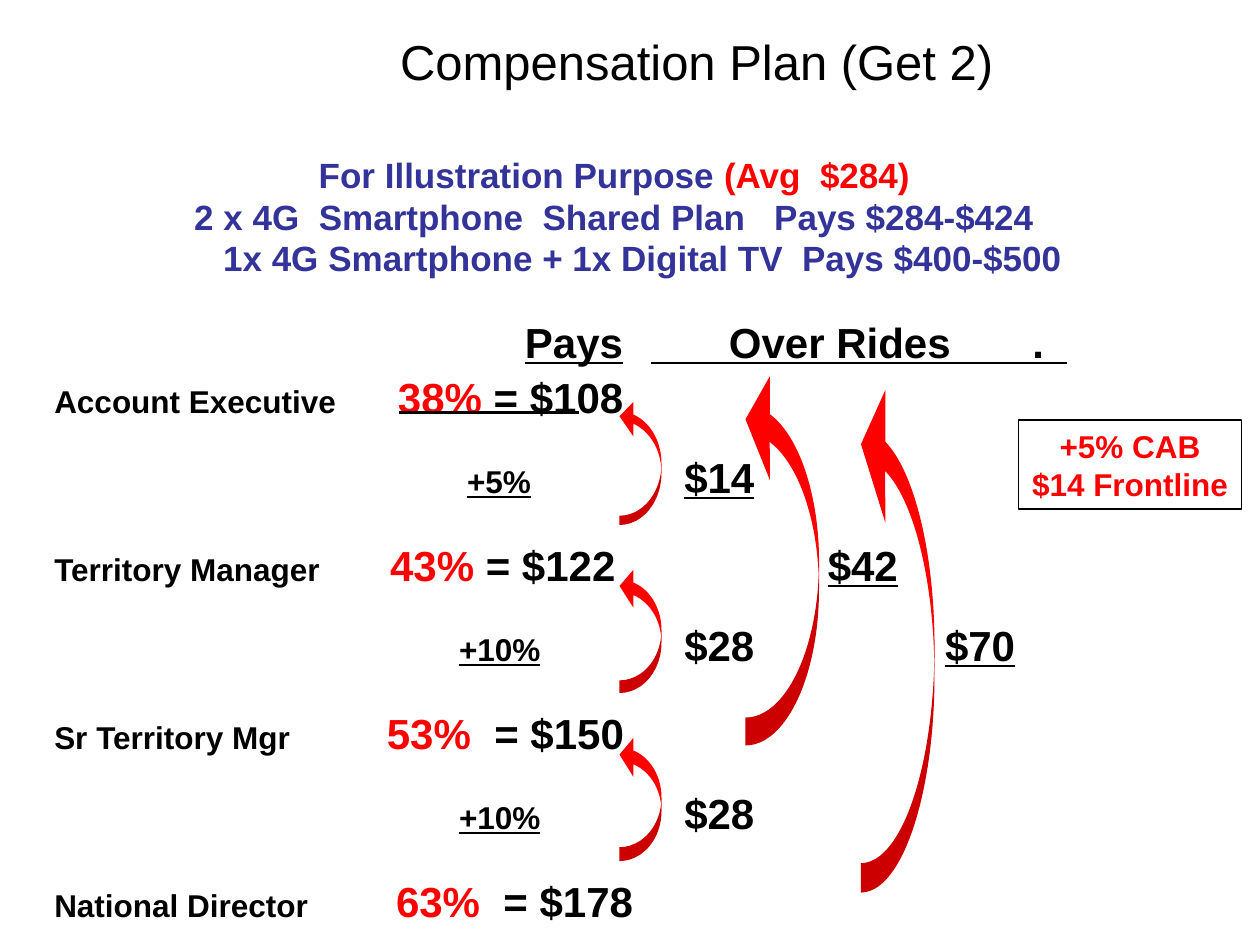
from lxml import etree
from pptx import Presentation
from pptx.dml.color import RGBColor
from pptx.enum.shapes import MSO_CONNECTOR, MSO_SHAPE
from pptx.enum.text import MSO_ANCHOR, PP_ALIGN
from pptx.oxml.ns import qn
from pptx.util import Pt

CURVE = MSO_SHAPE.CURVED_RIGHT_ARROW
RECT = MSO_SHAPE.RECTANGLE
LINE = MSO_CONNECTOR.STRAIGHT
TOP, MIDDLE = MSO_ANCHOR.TOP, MSO_ANCHOR.MIDDLE
LEFT, CENTER = PP_ALIGN.LEFT, PP_ALIGN.CENTER
HEX = {"black": "000000", "red": "FF0000", "blue": "333399"}


def rgb(name):
    """Return the named colour."""
    return RGBColor.from_string(HEX[name])


def write(para, text, size=18, color="black", bold=True, under=False):
    """Add a formatted run to a paragraph."""
    run = para.add_run()
    run.text = text
    font = run.font
    font.name, font.size = "Arial", Pt(size)
    font.bold, font.underline = bold, under
    font.color.rgb = rgb(color)


def set_tabs(para, stops):
    """Give a paragraph left tab stops, in points."""
    tabs = etree.SubElement(para._p.get_or_add_pPr(), qn("a:tabLst"))
    for stop in stops:
        etree.SubElement(tabs, qn("a:tab"), pos=str(Pt(stop)), algn="l")


def set_frame(frame, wrap=True, anchor=TOP):
    """Clear the insets of a text frame and return it."""
    frame.word_wrap, frame.vertical_anchor = wrap, anchor
    frame.margin_left = frame.margin_right = 0
    frame.margin_top = frame.margin_bottom = 0
    return frame


def add_box(slide, box):
    """Add a text box without insets and return its frame."""
    return set_frame(slide.shapes.add_textbox(*map(Pt, box)).text_frame)


def add_para(frame, first, align=LEFT):
    """Return the first paragraph of a frame, or a new one."""
    para = frame.paragraphs[0] if first else frame.add_paragraph()
    para.alignment = align
    return para


def add_title(slide, box):
    """Place the slide title."""
    title = slide.shapes.title
    title.left, title.top, title.width, title.height = map(Pt, box)
    frame = set_frame(title.text_frame)
    write(add_para(frame, True, CENTER), "Compensation Plan (Get 2)",
          size=28, bold=False)


def add_intro(slide, box):
    """Place the three lines on the sample plans."""
    left, top, width, height = box
    frame = add_box(slide, box)
    para = add_para(frame, True, CENTER)
    write(para, "For Illustration Purpose ", size=20, color="blue")
    write(para, "(Avg  $284)", size=20, color="red")
    write(add_para(frame, False, CENTER),
          "2 x 4G  Smartphone  Shared Plan   Pays $284-$424",
          size=20, color="blue")
    last = add_box(slide, (left + 127.5, top + 47.6, 500, 24))
    write(add_para(last, True),
          "1x 4G Smartphone + 1x Digital TV  Pays $400-$500",
          size=20, color="blue")


def add_rule(slide, left, right, top):
    """Draw a level black line."""
    rule = slide.shapes.add_connector(
        LINE, Pt(left), Pt(top), Pt(right), Pt(top))
    rule.line.color.rgb, rule.line.width = rgb("black"), Pt(1.25)
    etree.SubElement(rule._element.spPr, qn("a:effectLst"))


def add_heads(slide, box):
    """Place the column heads and their rules."""
    left, top = box[:2]
    para = add_para(add_box(slide, box), True)
    set_tabs(para, (116.6, 290))
    write(para, "Pays", size=24, under=True)
    write(para, "\tOver Rides\t.", size=24)
    add_rule(slide, left + 72, left + 310, top + 26.7)
    add_rule(slide, left - 72, left + 31, top + 55)


def add_ranks(slide, box):
    """Place the ranks, with the steps between them."""
    ranks = (
        ("Account Executive", "38%", " = $108", 196.4, ""),
        ("Territory Manager", "43%", " = $122", 191.9, "$42"),
        ("Sr Territory Mgr", "53%", "  = $150", 190.1, ""),
        ("National Director", "63%", "  = $178", 195.3, ""),
    )
    steps = (
        ("+5%", 235.9, "$14", True, ""),
        ("+10%", 231.3, "$28", False, "$70"),
        ("+10%", 231.3, "$28", False, ""),
    )
    frame = add_box(slide, box)
    for num, (name, rate, pay, stop, over) in enumerate(ranks):
        para = add_para(frame, num == 0)
        set_tabs(para, (stop, 442))
        if num:
            para.space_before = Pt(21.6)
        write(para, name + "\t")
        write(para, rate, size=24, color="red")
        write(para, pay, size=24)
        if over:
            write(para, "\t")
            write(para, over, size=24, under=True)
        if num < len(steps):
            rise, stop, gain, under, over = steps[num]
            para = add_para(frame, False)
            set_tabs(para, (stop, 360, 509))
            para.space_before = Pt(16.8)
            write(para, "\t")
            write(para, rise, under=True)
            write(para, "\t")
            write(para, gain, size=24, under=under)
            if over:
                write(para, "\t")
                write(para, over, size=24, under=True)


def add_arrow(slide, box, tail, head):
    """Draw a red arrow that curves back up to the left."""
    arrow = slide.shapes.add_shape(CURVE, *map(Pt, box))
    arrow.rotation = 180
    arrow.shadow.inherit = False
    for num, value in enumerate((tail, head, 0.33)):
        arrow.adjustments[num] = value
    arrow.fill.solid()
    arrow.fill.fore_color.rgb = rgb("red")
    arrow.line.fill.background()


def add_arrows(slide, left, top):
    """Draw the three short and two long arrows."""
    for num, tail in enumerate((0.22, 0.3, 0.33)):
        add_arrow(slide, (left, top + 96 * num, 24, 72), tail, tail + 0.6)
    add_arrow(slide, (left + 72, top - 18, 42, 216), 0.38, 1.41)
    add_arrow(slide, (left + 138, top - 12, 42, 294), 0.4, 1.8)


def add_bonus(slide, box):
    """Place the framed bonus note."""
    note = slide.shapes.add_shape(RECT, *map(Pt, box))
    note.shadow.inherit = False
    note.fill.background()
    note.line.color.rgb, note.line.width = rgb("black"), Pt(1)
    frame = set_frame(note.text_frame, wrap=False, anchor=MIDDLE)
    for num, text in enumerate(("+5% CAB", "$14 Frontline")):
        write(add_para(frame, num == 0, CENTER), text, color="red")


def main():
    """Build the slide and save it."""
    deck = Presentation()
    deck.slide_width, deck.slide_height = Pt(720), Pt(540)
    slide = deck.slides.add_slide(deck.slide_layouts[5])
    add_title(slide, (74, 18, 648, 75.6))
    add_intro(slide, (0, 87.8, 702, 72))
    add_ranks(slide, (31, 212.4, 671, 320))
    add_heads(slide, (300, 180.7, 318, 29))
    add_arrows(slide, 354, 228)
    add_bonus(slide, (582, 240, 127.5, 51))
    deck.save("out.pptx")


if __name__ == "__main__":
    main()
